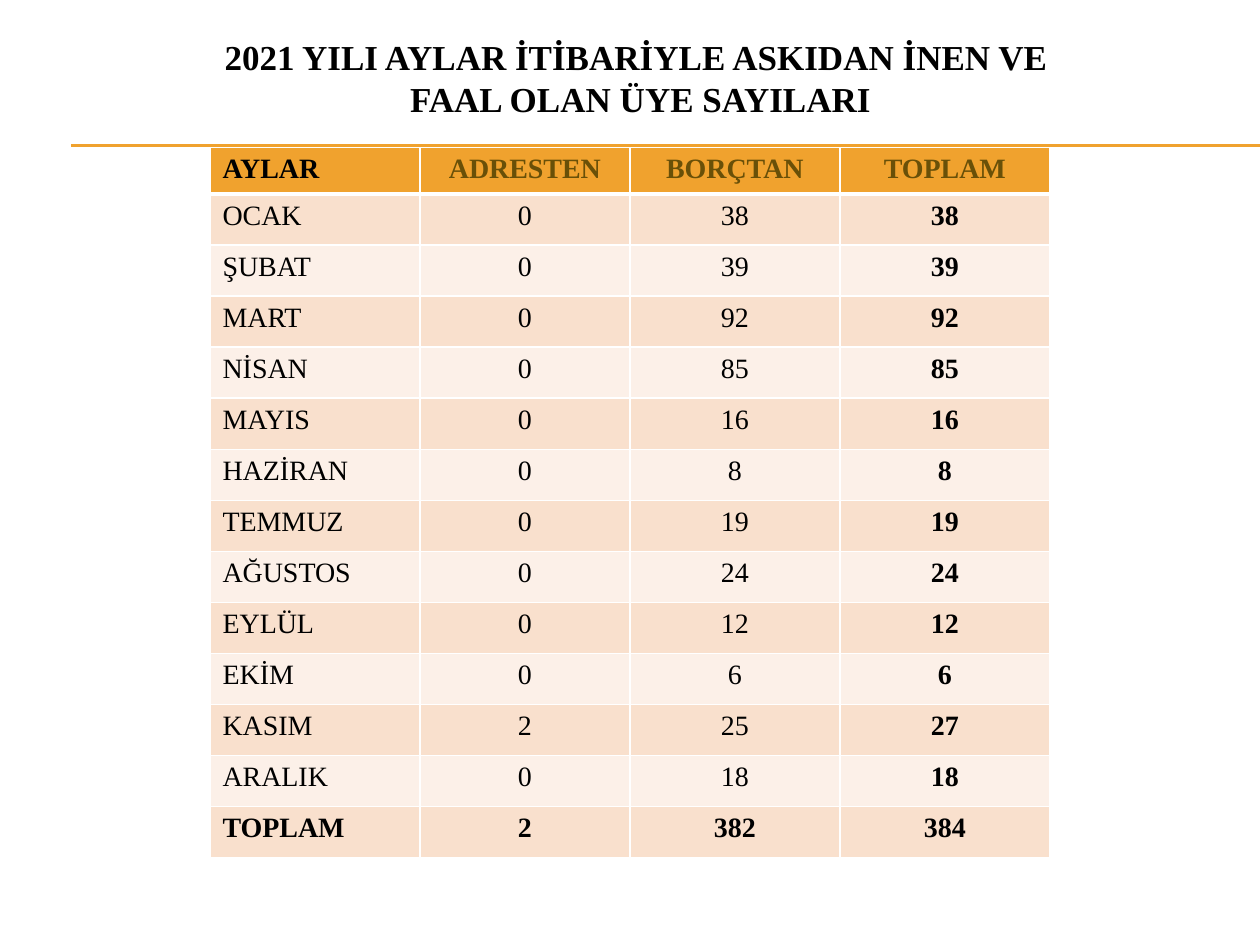
from dataclasses import dataclass

from lxml import etree
from pptx import Presentation
from pptx.dml.color import RGBColor
from pptx.enum.shapes import MSO_CONNECTOR
from pptx.enum.text import MSO_ANCHOR, PP_ALIGN
from pptx.oxml.ns import qn
from pptx.util import Pt

LEFT, CENTER = PP_ALIGN.LEFT, PP_ALIGN.CENTER
MIDDLE, TOP = MSO_ANCHOR.MIDDLE, MSO_ANCHOR.TOP
STRAIGHT = MSO_CONNECTOR.STRAIGHT
TITLE_ONLY = 5


@dataclass(frozen=True)
class Theme:
    font: str = "Times New Roman"
    title_size: float = 20
    table_size: float = 16
    ink: str = "000000"
    header_ink: str = "695008"
    accent: str = "F0A22E"
    bands: tuple = ("F9E0CD", "FCF0E8")
    border: str = "FFFFFF"
    rule_width: float = 0.75
    border_width: float = 1
    header_border_width: float = 3


THEME = Theme()
TITLE = "2021 YILI AYLAR İTİBARİYLE ASKIDAN İNEN VE \vFAAL OLAN ÜYE SAYILARI"
HEADERS = ("AYLAR", "ADRESTEN", "BORÇTAN", "TOPLAM")
MONTHS = (
    ("OCAK", 0, 38), ("ŞUBAT", 0, 39), ("MART", 0, 92), ("NİSAN", 0, 85),
    ("MAYIS", 0, 16), ("HAZİRAN", 0, 8), ("TEMMUZ", 0, 19), ("AĞUSTOS", 0, 24),
    ("EYLÜL", 0, 12), ("EKİM", 0, 6), ("KASIM", 2, 25), ("ARALIK", 0, 18),
)


def set_attributes(target, values):
    for name, value in values.items():
        setattr(target, name, value)


def write_text(frame, text, size, color, bold, align):
    frame.text = text
    para = frame.paragraphs[0]
    para.alignment = align
    for span in para.runs:
        set_attributes(span.font, {"name": THEME.font, "size": Pt(size), "bold": bold})
        span.font.color.rgb = RGBColor.from_string(color)


def add_title(page, box):
    left, top, width, height = box
    title = page.shapes.title
    set_attributes(title, {"left": Pt(left), "top": Pt(top),
                           "width": Pt(width), "height": Pt(height)})
    set_attributes(title.text_frame, {"word_wrap": True, "vertical_anchor": MIDDLE})
    write_text(title.text_frame, TITLE, THEME.title_size, THEME.ink, True, CENTER)


def add_rules(page, box):
    left, top, width, gap = box
    for y in (top, top + gap):
        rule = page.shapes.add_connector(
            STRAIGHT, Pt(left), Pt(y), Pt(left + width), Pt(y))
        rule.line.width = Pt(THEME.rule_width)
        rule.line.color.rgb = RGBColor.from_string(THEME.accent)
        etree.SubElement(rule._element.spPr, qn("a:effectLst"))


def set_borders(cell, widths):
    properties = cell._tc.get_or_add_tcPr()
    for side, width in widths.items():
        line = etree.SubElement(properties, qn(f"a:ln{side}"), w=str(Pt(width)))
        fill = etree.SubElement(line, qn("a:solidFill"))
        etree.SubElement(fill, qn("a:srgbClr"), val=THEME.border)


def table_rows():
    months = [(name, address, debt, address + debt) for name, address, debt in MONTHS]
    totals = [sum(column) for column in list(zip(*months))[1:]]
    return [HEADERS, *months, ("TOPLAM", *totals)]


def add_member_table(page, box, header_height):
    left, top, width, height = box
    rows = table_rows()
    last_row, last_column = len(rows) - 1, len(HEADERS) - 1
    table = page.shapes.add_table(
        len(rows), len(HEADERS), Pt(left), Pt(top), Pt(width), Pt(height)).table
    for column in table.columns:
        column.width = Pt(width / len(HEADERS))
    for r, values in enumerate(rows):
        is_header = r == 0
        table.rows[r].height = Pt(
            header_height if is_header else (height - header_height) / last_row)
        background = THEME.accent if is_header else THEME.bands[(r - 1) % 2]
        for c, value in enumerate(values):
            cell = table.cell(r, c)
            borders = dict.fromkeys("LRTB", THEME.border_width)
            if is_header:
                borders["B"] = THEME.header_border_width
            elif r == 1:
                borders["T"] = THEME.header_border_width
            set_borders(cell, borders)
            cell.fill.solid()
            cell.fill.fore_color.rgb = RGBColor.from_string(background)
            cell.vertical_anchor = TOP
            color = THEME.header_ink if is_header and c > 0 else THEME.ink
            bold = r in (0, last_row) or c == last_column
            write_text(cell.text_frame, str(value), THEME.table_size, color, bold,
                       CENTER if c > 0 else LEFT)


def main():
    deck = Presentation()
    set_attributes(deck, {"slide_width": Pt(720), "slide_height": Pt(540)})
    page = deck.slides.add_slide(deck.slide_layouts[TITLE_ONLY])
    add_rules(page, (40.5, 82.8, 679.5, 0.6))
    add_title(page, (24, 11.5, 684, 66))
    add_member_table(page, (120, 84.3, 480, 406.1), 26.6)
    deck.save("out.pptx")


if __name__ == "__main__":
    main()
